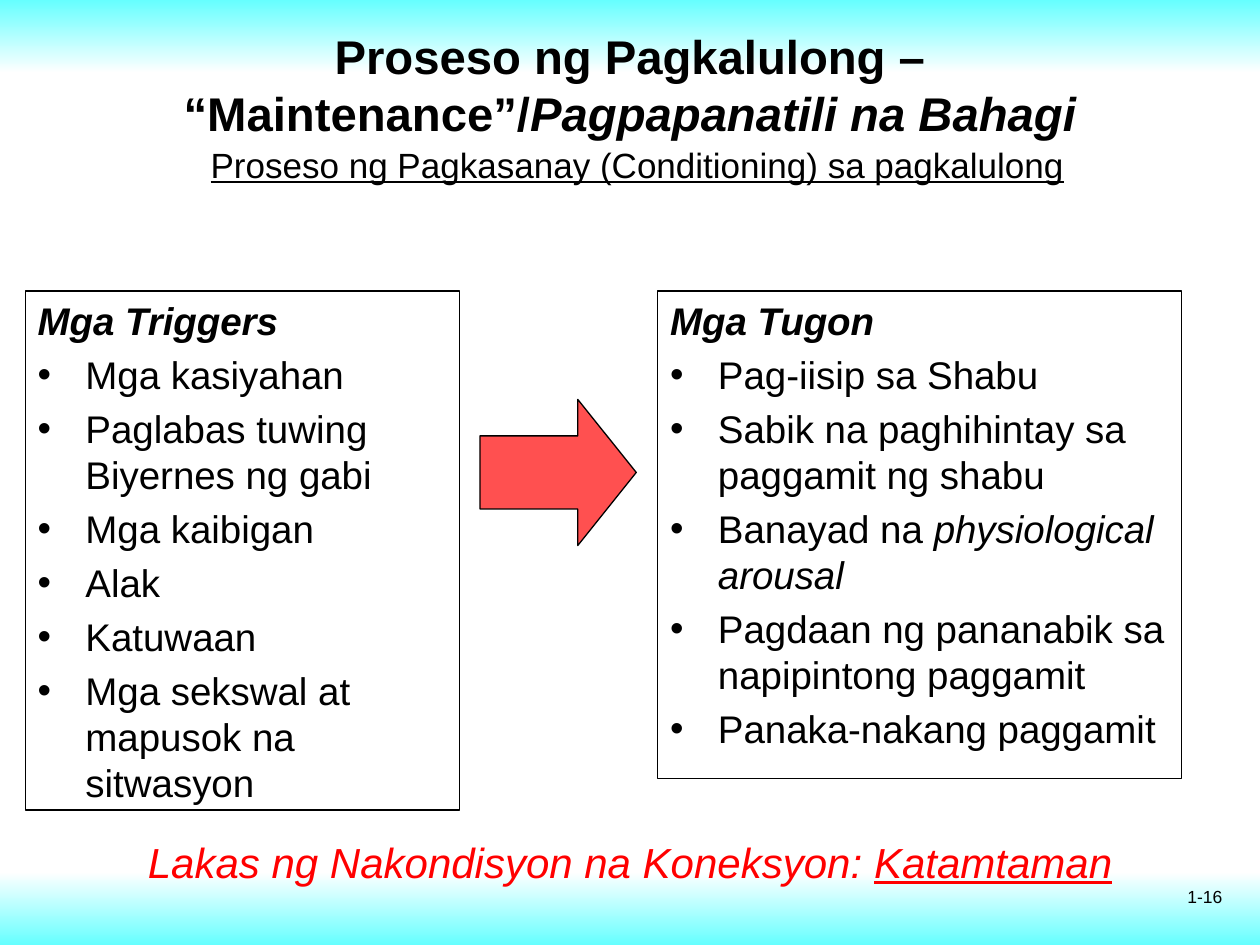
from typing import NamedTuple

from lxml import etree
from pptx import Presentation
from pptx.dml.color import RGBColor
from pptx.enum.shapes import MSO_SHAPE as Shape
from pptx.enum.text import MSO_ANCHOR as Anchor, MSO_AUTO_SIZE as AutoSize, PP_ALIGN as Align
from pptx.oxml.ns import qn
from pptx.util import Inches, Pt

BLACK = RGBColor(0, 0, 0)
WHITE = RGBColor(0xFF, 0xFF, 0xFF)
CYAN = RGBColor(0x66, 0xFF, 0xFF)
CORAL = RGBColor(0xFF, 0x50, 0x50)
RED = RGBColor(0xFF, 0, 0)
FONT = "Arial"
INDENT = Inches(0.38)


class Box(NamedTuple):
    left: float
    top: float
    width: float
    height: float


class Run(NamedTuple):
    text: str
    bold: bool = False
    italic: bool = False
    underline: bool = False


class Panel(NamedTuple):
    box: Box
    heading: str
    items: list[list[Run]]


class Label(NamedTuple):
    box: Box
    runs: list[Run]
    size: int
    color: RGBColor = BLACK
    align: Align = Align.CENTER
    anchor: Anchor = Anchor.TOP
    wrap: bool = True


BANDS = [
    (Box(0, 6.92, 10, 0.58), WHITE, CYAN),
    (Box(0, 0, 10, 0.58), CYAN, WHITE),
]

PANELS = [
    Panel(Box(0.2, 2.31, 3.45, 4.12), "Mga Triggers", [
        [Run("Mga kasiyahan")],
        [Run("Paglabas tuwing Biyernes ng gabi")],
        [Run("Mga kaibigan")],
        [Run("Alak")],
        [Run("Katuwaan")],
        [Run("Mga sekswal at mapusok na sitwasyon")],
    ]),
    Panel(Box(5.22, 2.31, 4.16, 3.87), "Mga Tugon", [
        [Run("Pag-iisip sa Shabu")],
        [Run("Sabik na paghihintay sa paggamit ng shabu")],
        [Run("Banayad na "), Run("physiological arousal", italic=True)],
        [Run("Pagdaan ng pananabik sa napipintong paggamit")],
        [Run("Panaka-nakang paggamit")],
    ]),
]

LABELS = [
    Label(Box(7.47, 6.98, 2.33, 0.52), [Run("1-16")], 10, align=Align.RIGHT),
    Label(Box(0, 0.31, 10, 0.71),
          [Run("Proseso ng Pagkalulong – “Maintenance”/", bold=True),
           Run("Pagpapanatili na Bahagi", bold=True, italic=True)],
          27, anchor=Anchor.MIDDLE),
    Label(Box(0.79, 6.48, 8.42, 0.71),
          [Run("Lakas ng Nakondisyon na Koneksyon: ", italic=True),
           Run("Katamtaman", italic=True, underline=True)],
          24, RED, anchor=Anchor.MIDDLE),
    Label(Box(1.48, 1.09, 7.16, 0.44),
          [Run("Proseso ng Pagkasanay (Conditioning) sa pagkalulong", underline=True)],
          20, wrap=False),
]


def add_runs(p, runs: list[Run], size: int, color: RGBColor = BLACK) -> None:
    for run in runs:
        r = p.add_run()
        r.text = run.text
        font = r.font
        font.name, font.size, font.color.rgb = FONT, Pt(size), color
        font.bold, font.italic, font.underline = run.bold, run.italic, run.underline


def add_shape(s, kind: Shape, box: Box):
    sp = s.shapes.add_shape(kind, *map(Inches, box))
    sp.shadow.inherit = False
    return sp


def outline(sp) -> None:
    sp.line.color.rgb = BLACK
    sp.line.width = Pt(0.75)


def add_band(s, box: Box, start: RGBColor, end: RGBColor) -> None:
    sp = add_shape(s, Shape.RECTANGLE, box)
    sp.line.fill.background()
    sp.fill.gradient()
    sp.fill.gradient_angle = 270  # top to bottom
    for stop, color in zip(sp.fill.gradient_stops, (start, end)):
        stop.color.rgb = color


def add_bullet(p) -> None:
    pPr = p._p.get_or_add_pPr()
    pPr.set("marL", str(INDENT))
    pPr.set("indent", str(-INDENT))
    etree.SubElement(pPr, qn("a:buFont")).set("typeface", FONT)
    etree.SubElement(pPr, qn("a:buChar")).set("char", "•")


def add_panel(s, panel: Panel) -> None:
    sp = add_shape(s, Shape.RECTANGLE, panel.box)
    sp.fill.background()
    outline(sp)
    tf = sp.text_frame
    tf.word_wrap = True
    tf.vertical_anchor = Anchor.TOP
    rows = [[Run(panel.heading, bold=True, italic=True)], *panel.items]
    for i, runs in enumerate(rows):
        p = tf.add_paragraph() if i else tf.paragraphs[0]
        p.alignment = Align.LEFT
        p.space_before = Pt(4.4)
        if i:
            add_bullet(p)
        add_runs(p, runs, 22)


def add_label(s, label: Label) -> None:
    tf = s.shapes.add_textbox(*map(Inches, label.box)).text_frame
    tf.word_wrap = label.wrap
    tf.auto_size = AutoSize.NONE if label.wrap else AutoSize.SHAPE_TO_FIT_TEXT
    tf.vertical_anchor = label.anchor
    p = tf.paragraphs[0]
    p.alignment = label.align
    add_runs(p, label.runs, label.size, label.color)


def main() -> None:
    prs = Presentation()
    prs.slide_width, prs.slide_height = Inches(10), Inches(7.5)
    s = prs.slides.add_slide(prs.slide_layouts[6])

    # Gradient bands along the edges
    for band in BANDS:
        add_band(s, *band)

    # Triggers and responses
    for panel in PANELS:
        add_panel(s, panel)

    # Arrow from triggers to responses
    arrow = add_shape(s, Shape.RIGHT_ARROW, Box(3.81, 3.17, 1.24, 1.16))
    arrow.adjustments[0], arrow.adjustments[1] = 0.5, 0.4
    arrow.fill.solid()
    arrow.fill.fore_color.rgb = CORAL
    outline(arrow)

    # Title, subtitle, conclusion and page number
    for label in LABELS:
        add_label(s, label)

    prs.save("out.pptx")


if __name__ == "__main__":
    main()
